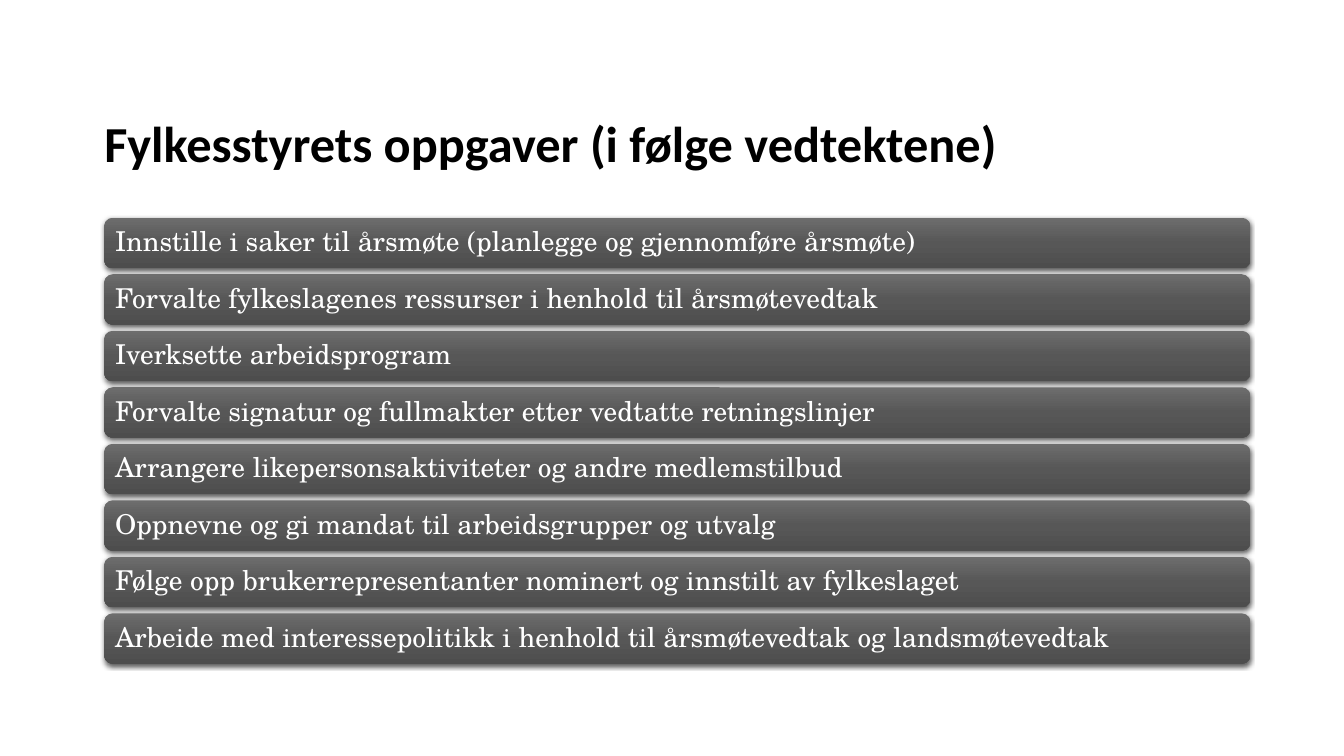
from pptx import Presentation, oxml, util as u
from pptx.dml.color import RGBColor
from pptx.enum import shapes, text
from pptx.oxml import ns

Inches = u.Inches

COLOURS = {
    "title": "000000",
    "bar_text": "FFFFFF",
    "bar_top": "6D6D6D",
    "bar_middle": "575757",
    "bar_bottom": "4D4D4D",
    "shadow": "000000",
}
TASKS = [
    "Innstille i saker til årsmøte (planlegge og gjennomføre årsmøte)",
    "Forvalte fylkeslagenes ressurser i henhold til årsmøtevedtak",
    "Iverksette arbeidsprogram",
    "Forvalte signatur og fullmakter etter vedtatte retningslinjer",
    "Arrangere likepersonsaktiviteter og andre medlemstilbud",
    "Oppnevne og gi mandat til arbeidsgrupper og utvalg",
    "Følge opp brukerrepresentanter nominert og innstilt av fylkeslaget",
    "Arbeide med interessepolitikk i henhold til årsmøtevedtak og landsmøtevedtak",
]


def write_text(shape, words, *, font, size, colour, bold=False,
               anchor=text.MSO_ANCHOR.MIDDLE, inset=0):
    frame = shape.text_frame
    frame.word_wrap = True
    frame.auto_size = text.MSO_AUTO_SIZE.NONE
    frame.vertical_anchor = anchor
    frame.margin_left = frame.margin_right = Inches(inset)
    frame.margin_top = frame.margin_bottom = Inches(inset)
    para = frame.paragraphs[0]
    para.alignment = text.PP_ALIGN.LEFT
    para.line_spacing = 0.9
    span = para.add_run()
    span.text = words
    span.font.name = font
    span.font.size = u.Pt(size)
    span.font.bold = bold
    span.font.color.rgb = RGBColor.from_string(COLOURS[colour])


def style_bar(bar):
    """Give a bar its vertical gradient and soft shadow, without an outline."""
    bar.line.fill.background()
    stops = "".join(
        f'<a:gs pos="{position}"><a:srgbClr val="{COLOURS[name]}"/></a:gs>'
        for position, name in ((0, "bar_top"), (50000, "bar_middle"), (100000, "bar_bottom"))
    )
    gradient = oxml.parse_xml(
        f'<a:gradFill {ns.nsdecls("a")} rotWithShape="1"><a:gsLst>{stops}</a:gsLst>'
        '<a:lin ang="5400000" scaled="0"/></a:gradFill>')
    shadow = oxml.parse_xml(
        f'<a:effectLst {ns.nsdecls("a")}><a:outerShdw blurRad="{u.Pt(4.5)}" '
        f'dist="{u.Pt(1.5)}" dir="5400000" algn="ctr" rotWithShape="0">'
        f'<a:srgbClr val="{COLOURS["shadow"]}"><a:alpha val="63000"/></a:srgbClr>'
        '</a:outerShdw></a:effectLst>')
    properties = bar.element.spPr
    properties.find(ns.qn("a:prstGeom")).addnext(gradient)
    properties.find(ns.qn("a:ln")).addnext(shadow)


def place_title(page, left, top, width, height):
    title = page.shapes.title
    title.left, title.top = Inches(left), Inches(top)
    title.width, title.height = Inches(width), Inches(height)
    write_text(title, "Fylkesstyrets oppgaver (i følge vedtektene)", font="Calibri",
               size=48, colour="title", bold=True, anchor=text.MSO_ANCHOR.BOTTOM)


def place_tasks(page, left, top, width, height, gap=0.08):
    bar_height = (height - gap * (len(TASKS) - 1)) / len(TASKS)
    group = page.shapes.add_group_shape()
    for row, task in enumerate(TASKS):
        bar = group.shapes.add_shape(
            shapes.MSO_SHAPE.ROUNDED_RECTANGLE, Inches(left),
            Inches(top + row * (bar_height + gap)), Inches(width), Inches(bar_height))
        style_bar(bar)
        write_text(bar, task, font="TeX Gyre Schola", size=26, colour="bar_text", inset=0.11)


def main():
    deck = Presentation()
    deck.slide_width, deck.slide_height = Inches(17.78), Inches(10)
    page = deck.slides.add_slide(deck.slide_layouts.get_by_name("Title Only"))

    # Heading
    place_title(page, 1.38, 0.32, 15.16, 1.97)
    # Stack of task bars
    place_tasks(page, 1.38, 2.88, 15.16, 5.9)

    deck.save("out.pptx")


if __name__ == "__main__":
    main()
